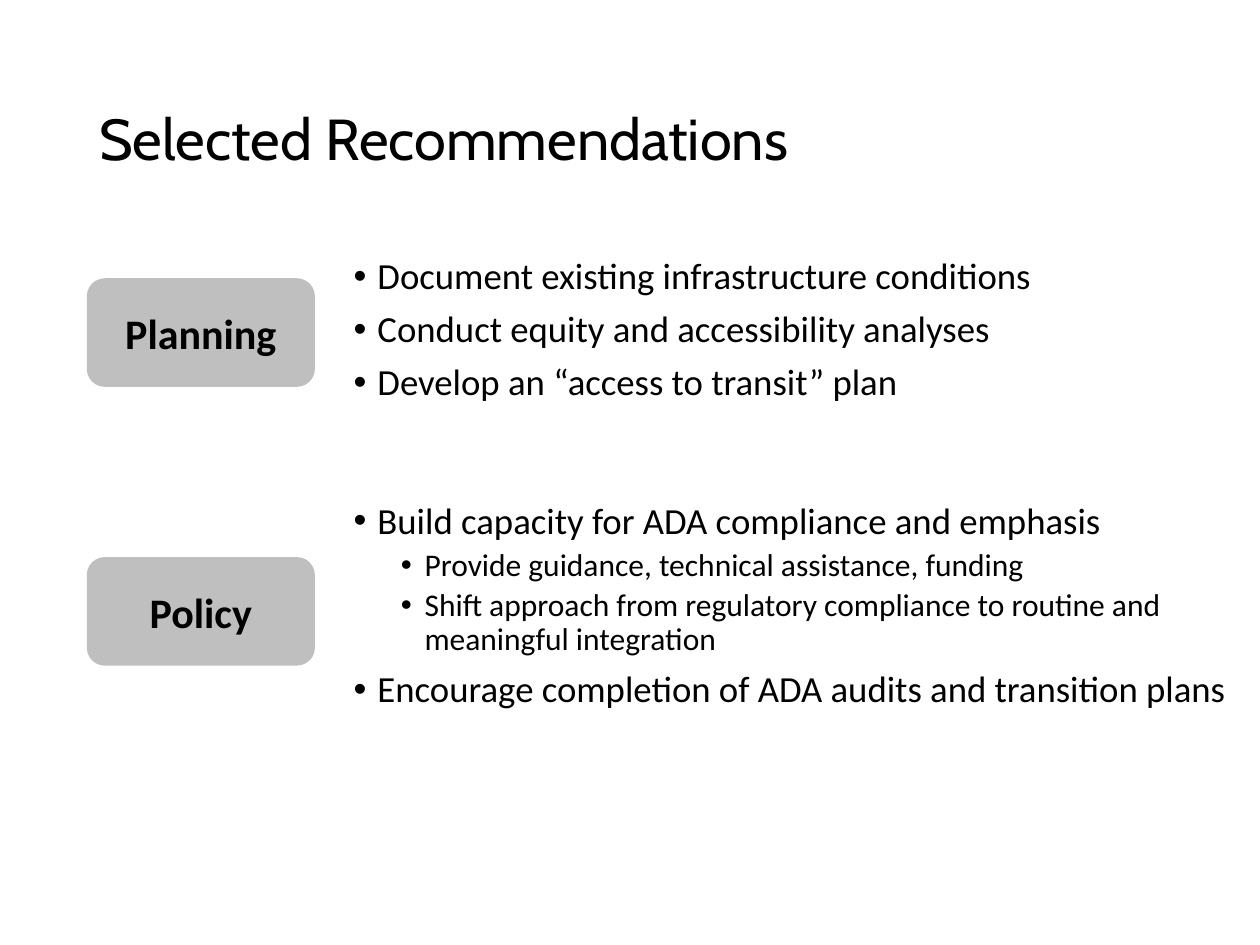
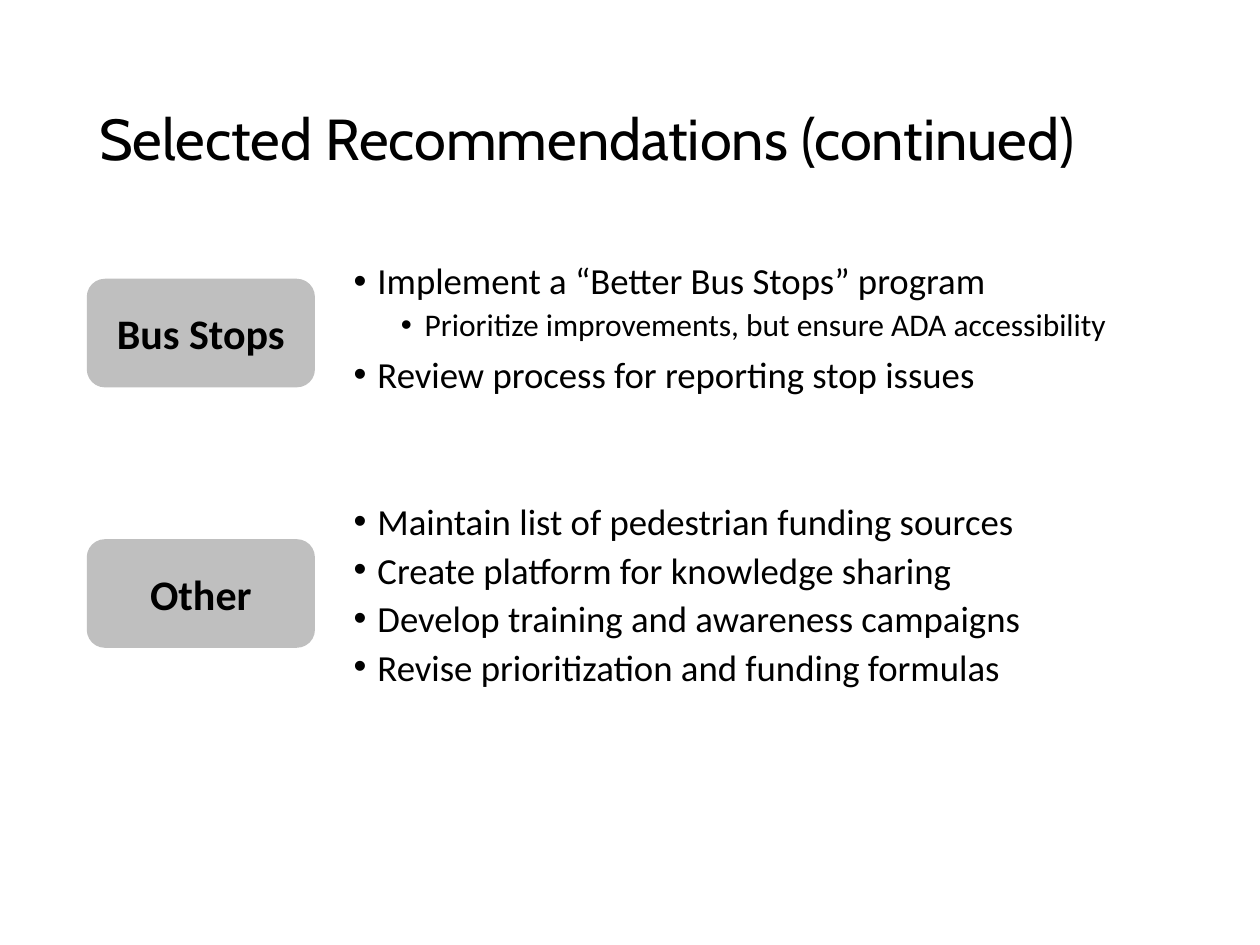
from pptx import Presentation
from pptx.dml.color import RGBColor
from pptx.enum.shapes import MSO_SHAPE
from pptx.enum.text import MSO_ANCHOR, PP_ALIGN
from pptx.util import Cm, Pt
from lxml import etree

ROUNDED = MSO_SHAPE.ROUNDED_RECTANGLE
MIDDLE = MSO_ANCHOR.MIDDLE
CENTER = PP_ALIGN.CENTER
BLACK = RGBColor(0x00, 0x00, 0x00)
GRAY = RGBColor(0xBF, 0xBF, 0xBF)
NS = "http://schemas.openxmlformats.org/drawingml/2006/main"

LEFT = Cm(1.75)
LABEL_W, LABEL_H = Cm(4.6), Cm(2.19)
LIST_LEFT = Cm(6.88)
LEVELS = [(21, 7.5, 0.48), (18, 3.8, 1.43)]
HANGING = Cm(0.48)


def add_run(p, text, size, font="Calibri", bold=False):
    r = p.add_run()
    r.text = text
    r.font.name = font
    r.font.size = Pt(size)
    r.font.bold = bold
    r.font.color.rgb = BLACK


def add_bullet(p, level, indent):
    pPr = p._p.get_or_add_pPr()
    pPr.set("marL", str(Cm(indent)))
    pPr.set("indent", str(-HANGING))
    p.level = level
    etree.SubElement(pPr, f"{{{NS}}}buFont").set("typeface", "Arial")
    etree.SubElement(pPr, f"{{{NS}}}buChar").set("char", "•")


# Each section: label, label top, list top, list width, list height, line spacing, items
SLIDES = [
    ("Selected Recommendations", [
        ("Planning", 5.61, 5.08, 16.76, 3.25, 0.9, [
            (0, "Document existing infrastructure conditions"),
            (0, "Conduct equity and accessibility analyses"),
            (0, "Develop an “access to transit” plan"),
        ]),
        ("Policy", 11.23, 10.01, 18.15, 4.65, 0.9, [
            (0, "Build capacity for ADA compliance and emphasis"),
            (1, "Provide guidance, technical assistance, funding"),
            (1, "Shift approach from regulatory compliance to routine and "
                "meaningful integration"),
            (0, "Encourage completion of ADA audits and transition plans"),
        ]),
    ]),
    ("Selected Recommendations (continued)", [
        ("Bus Stops", 5.62, 5.18, 16.76, 3.07, 0.9, [
            (0, "Implement a “Better Bus Stops” program"),
            (1, "Prioritize improvements, but ensure ADA accessibility"),
            (0, "Review process for reporting stop issues"),
        ]),
        ("Other", 10.87, 10.11, 16.76, 4.29, 0.8, [
            (0, "Maintain list of pedestrian funding sources"),
            (0, "Create platform for knowledge sharing"),
            (0, "Develop training and awareness campaigns"),
            (0, "Revise prioritization and funding formulas"),
        ]),
    ]),
]

prs = Presentation()
prs.slide_width = Cm(25.4)
prs.slide_height = Cm(19.05)

for title, sections in SLIDES:
    s = prs.slides.add_slide(prs.slide_layouts[6])
    tf = s.shapes.add_textbox(LEFT, Cm(1.02), Cm(21.9), Cm(3.68)).text_frame
    tf.word_wrap = True
    tf.vertical_anchor = MIDDLE
    p = tf.paragraphs[0]
    p.line_spacing = 0.9
    add_run(p, title, 33, "Cabin")

    for label, label_top, list_top, width, height, spacing, items in sections:
        sp = s.shapes.add_shape(ROUNDED, LEFT, Cm(label_top), LABEL_W, LABEL_H)
        sp.shadow.inherit = False
        sp.fill.solid()
        sp.fill.fore_color.rgb = GRAY
        sp.line.fill.background()
        tf = sp.text_frame
        tf.word_wrap = True
        tf.vertical_anchor = MIDDLE
        p = tf.paragraphs[0]
        p.alignment = CENTER
        add_run(p, label, 24, bold=True)

        tf = s.shapes.add_textbox(LIST_LEFT, Cm(list_top), Cm(width), Cm(height)).text_frame
        tf.word_wrap = True
        for i, (level, text) in enumerate(items):
            size, before, indent = LEVELS[level]
            p = tf.paragraphs[0] if i == 0 else tf.add_paragraph()
            add_bullet(p, level, indent)
            p.line_spacing = spacing
            if i:
                p.space_before = Pt(before)
            add_run(p, text, size)

prs.save("out.pptx")
